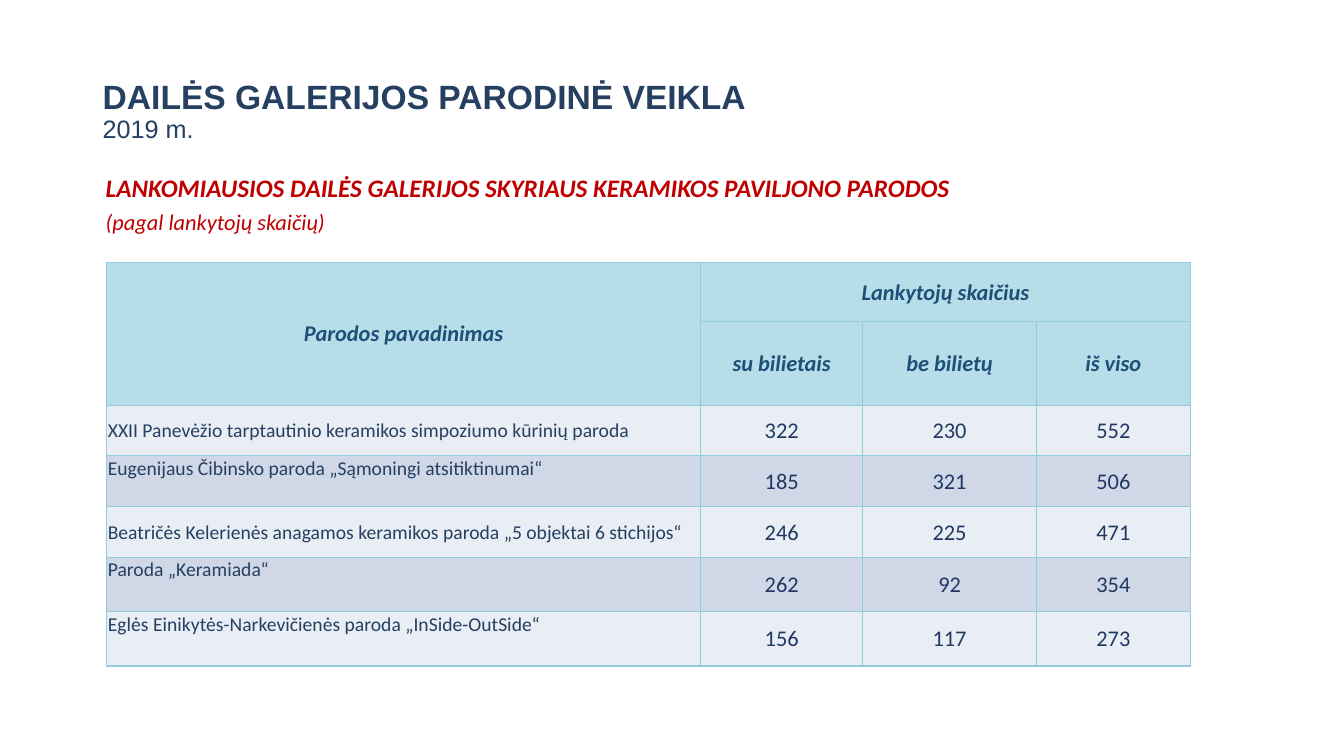
from dataclasses import dataclass

from pptx import Presentation
from pptx import util as u
from pptx.dml.color import RGBColor
from pptx.enum import text
from pptx.oxml import parse_xml
from pptx.oxml.ns import nsdecls

SLIDE_W, SLIDE_H = u.Inches(13.333), u.Inches(7.5)

NAVY = RGBColor(0x25, 0x40, 0x61)
RED = RGBColor(0xC0, 0x00, 0x00)
HEAD_TEXT = RGBColor(0x1F, 0x4E, 0x79)
COUNT_TEXT = RGBColor(0x20, 0x38, 0x64)
HEAD_FILL = RGBColor(0xB7, 0xDE, 0xE8)
BAND_FILLS = (RGBColor(0xE9, 0xED, 0xF4), RGBColor(0xD0, 0xD8, 0xE8))
BORDER = RGBColor(0x93, 0xCD, 0xDD)

TOP, MIDDLE, BOTTOM = (text.MSO_ANCHOR.TOP, text.MSO_ANCHOR.MIDDLE,
                       text.MSO_ANCHOR.BOTTOM)
LEFT, CENTER = text.PP_ALIGN.LEFT, text.PP_ALIGN.CENTER


@dataclass(frozen=True)
class Style:
    size: int
    color: RGBColor
    font: str = "Calibri"
    bold: bool = False
    italic: bool = False


@dataclass(frozen=True)
class Box:
    x: float
    y: float
    w: float
    h: float


@dataclass(frozen=True)
class Exhibition:
    name: str
    ticketed: int
    free: int
    anchor: text.MSO_ANCHOR = TOP


TITLE = Style(24, NAVY, "Arial", bold=True)
YEAR = Style(18, NAVY, "Arial")
SUBTITLE = Style(18, RED, bold=True, italic=True)
NOTE = Style(16, RED, italic=True)
HEAD = Style(16, HEAD_TEXT, bold=True, italic=True)
NAME = Style(14, NAVY)
COUNT = Style(16, COUNT_TEXT)

TITLE_BOX = Box(6.9, 6.67, 88.43, 13.07)
SUBTITLE_BOX = Box(7.13, 23.2, 87.83, 8.8)
COLS = (44.18, 12.08, 12.9, 11.48)
ROWS = (7.87, 11.07, 6.7, 6.7, 6.7, 7.2, 7.2)
TABLE_BOX = Box(7.95, 34.67, sum(COLS), sum(ROWS))

COUNT_HEADS = ("su bilietais", "be bilietų", "iš viso")
EXHIBITIONS = (
    Exhibition("XXII Panevėžio tarptautinio keramikos simpoziumo kūrinių paroda",
               322, 230, MIDDLE),
    Exhibition("Eugenijaus Čibinsko paroda „Sąmoningi atsitiktinumai“", 185, 321),
    Exhibition("Beatričės Kelerienės anagamos keramikos paroda „5 objektai 6 stichijos“",
               246, 225, MIDDLE),
    Exhibition("Paroda „Keramiada“", 262, 92),
    Exhibition("Eglės Einikytės-Narkevičienės paroda „InSide-OutSide“", 156, 117),
)


def across(percent: float) -> int:
    return round(SLIDE_W * percent / 100)


def down(percent: float) -> int:
    return round(SLIDE_H * percent / 100)


def place(box: Box) -> tuple[int, int, int, int]:
    return across(box.x), down(box.y), across(box.w), down(box.h)


def add_run(p, words: str, style: Style) -> None:
    r = p.add_run()
    r.text = words
    f = r.font
    f.name, f.size = style.font, u.Pt(style.size)
    f.bold, f.italic = style.bold, style.italic
    f.color.rgb = style.color


def add_text_box(s, box: Box, anchor: text.MSO_ANCHOR):
    tf = s.shapes.add_textbox(*place(box)).text_frame
    tf.word_wrap = True
    tf.vertical_anchor = anchor
    return tf


def add_title(s) -> None:
    p = add_text_box(s, TITLE_BOX, BOTTOM).paragraphs[0]
    p.line_spacing = 0.9
    add_run(p, "DAILĖS GALERIJOS PARODINĖ VEIKLA", TITLE)
    p.add_line_break()
    add_run(p, "2019 m.", YEAR)


def add_subtitle(s) -> None:
    tf = add_text_box(s, SUBTITLE_BOX, TOP)
    heading, note = tf.paragraphs[0], tf.add_paragraph()
    for p in (heading, note):
        p.line_spacing = 0.7
        p.space_before = u.Pt(10)
    add_run(heading, "LANKOMIAUSIOS DAILĖS GALERIJOS SKYRIAUS KERAMIKOS "
                     "PAVILJONO PARODOS", SUBTITLE)
    add_run(note, "(pagal lankytojų skaičių)", NOTE)


def format_cell(cell, fill: RGBColor) -> None:
    tc_pr = cell._tc.get_or_add_tcPr()
    for side in ("lnL", "lnR", "lnT", "lnB"):
        tc_pr.append(parse_xml(
            f'<a:{side} {nsdecls("a")} w="{u.Pt(1)}"><a:solidFill>'
            f'<a:srgbClr val="{BORDER}"/></a:solidFill></a:{side}>'))
    cell.fill.solid()
    cell.fill.fore_color.rgb = fill
    cell.margin_left = cell.margin_right = cell.margin_top = u.Inches(0.01)
    cell.margin_bottom = 0


def fill_cell(cell, words: str, style: Style, align: text.PP_ALIGN = CENTER,
              anchor: text.MSO_ANCHOR = MIDDLE) -> None:
    cell.vertical_anchor = anchor
    p = cell.text_frame.paragraphs[0]
    p.alignment = align
    add_run(p, words, style)


def add_visitor_table(s) -> None:
    tbl = s.shapes.add_table(len(ROWS), len(COLS), *place(TABLE_BOX)).table
    tbl.first_row = tbl.horz_banding = False
    for col, width in zip(tbl.columns, COLS):
        col.width = across(width)
    for i, (row, height) in enumerate(zip(tbl.rows, ROWS)):
        row.height = down(height)
        for cell in row.cells:
            format_cell(cell, HEAD_FILL if i < 2 else BAND_FILLS[i % 2])

    tbl.cell(0, 0).merge(tbl.cell(1, 0))
    tbl.cell(0, 1).merge(tbl.cell(0, 3))
    fill_cell(tbl.cell(0, 0), "Parodos pavadinimas", HEAD)
    fill_cell(tbl.cell(0, 1), "Lankytojų skaičius", HEAD)
    for j, head in enumerate(COUNT_HEADS, 1):
        fill_cell(tbl.cell(1, j), head, HEAD)

    for i, show in enumerate(EXHIBITIONS, 2):
        fill_cell(tbl.cell(i, 0), show.name, NAME, LEFT, show.anchor)
        counts = (show.ticketed, show.free, show.ticketed + show.free)
        for j, count in enumerate(counts, 1):
            fill_cell(tbl.cell(i, j), str(count), COUNT)


def main() -> None:
    prs = Presentation()
    prs.slide_width, prs.slide_height = SLIDE_W, SLIDE_H
    s = prs.slides.add_slide(prs.slide_layouts[6])
    add_title(s)
    add_subtitle(s)
    add_visitor_table(s)
    prs.save("out.pptx")


if __name__ == "__main__":
    main()
